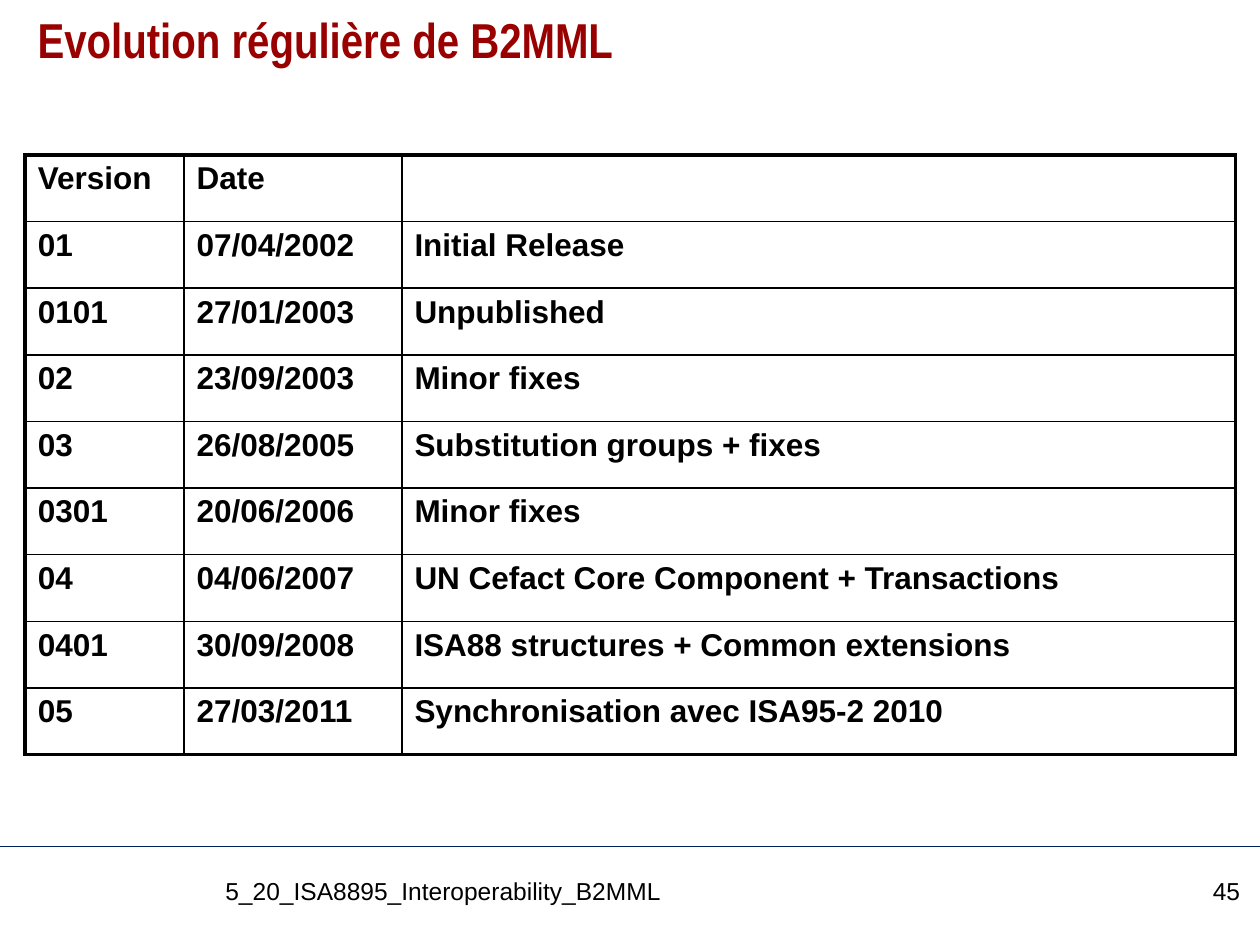
from lxml.etree import SubElement
from pptx import Presentation
from pptx.dml.color import RGBColor
from pptx.enum.shapes import MSO_CONNECTOR
from pptx.enum.text import MSO_ANCHOR, PP_ALIGN
from pptx.oxml.ns import qn
from pptx.util import Pt

COLORS = {"title": "990000", "cell": "010000", "footer": "000000",
          "border": "000000", "rule": "002060"}
TITLE = "Evolution régulière de B2MML"
FOOTER = "5_20_ISA8895_Interoperability_B2MML"
PAGE = "45"
VERSIONS = [
    ("Version", "Date", ""),
    ("01", "07/04/2002", "Initial Release"),
    ("0101", "27/01/2003", "Unpublished"),
    ("02", "23/09/2003", "Minor fixes"),
    ("03", "26/08/2005", "Substitution groups + fixes"),
    ("0301", "20/06/2006", "Minor fixes"),
    ("04", "04/06/2007", "UN Cefact Core Component + Transactions"),
    ("0401", "30/09/2008", "ISA88 structures + Common extensions"),
    ("05", "27/03/2011", "Synchronisation avec ISA95-2 2010"),
]
SLIDE_W, SLIDE_H = 720, 540
LEFT, TABLE_TOP = 14.4, 88.56
COL_WIDTHS = [90.72, 124.56, 476.4]
ROW_H = 38.08
RULE_Y, FOOTER_TOP, FOOTER_H = 483.84, 496.8, 32.4
OUTER, INNER = 2.25, 1


def color(name):
    return RGBColor.from_string(COLORS[name])


def add_run(p, text, size, name, font="Arial", bold=False):
    r = p.add_run()
    r.text = text
    r.font.size, r.font.name, r.font.bold = Pt(size), font, bold
    r.font.color.rgb = color(name)


def add_text(s, box, text, size, name, align=PP_ALIGN.LEFT, spacing=1.0, **style):
    tf = s.shapes.add_textbox(*map(Pt, box)).text_frame
    tf.word_wrap = True
    tf.vertical_anchor = MSO_ANCHOR.TOP
    p = tf.paragraphs[0]
    p.alignment, p.line_spacing = align, spacing
    add_run(p, text, size, name, **style)


def set_borders(cell, widths):
    """Draw the left, right, top and bottom borders, widths in points."""
    tcPr = cell._tc.get_or_add_tcPr()
    for i, (side, width) in enumerate(zip(("lnL", "lnR", "lnT", "lnB"), widths)):
        ln = tcPr.makeelement(qn(f"a:{side}"), {"w": str(Pt(width))})
        fill = SubElement(ln, qn("a:solidFill"))
        SubElement(fill, qn("a:srgbClr"), val=COLORS["border"])
        tcPr.insert(i, ln)


def add_versions_table(s):
    n_rows, n_cols = len(VERSIONS), len(COL_WIDTHS)
    table = s.shapes.add_table(n_rows, n_cols, Pt(LEFT), Pt(TABLE_TOP),
                               Pt(sum(COL_WIDTHS)), Pt(ROW_H * n_rows)).table
    table.first_row = table.horz_banding = False
    for col, width in zip(table.columns, COL_WIDTHS):
        col.width = Pt(width)
    for i, row in enumerate(VERSIONS):
        table.rows[i].height = Pt(ROW_H)
        for j, text in enumerate(row):
            cell = table.cell(i, j)
            cell.fill.background()
            on_edge = (j == 0, j == n_cols - 1, i == 0, i == n_rows - 1)
            set_borders(cell, [OUTER if edge else INNER for edge in on_edge])
            if text:
                add_run(cell.text_frame.paragraphs[0], text, 18, "cell", bold=True)


def add_footer_rule(s):
    line = s.shapes.add_connector(MSO_CONNECTOR.STRAIGHT, Pt(0), Pt(RULE_Y),
                                  Pt(SLIDE_W), Pt(RULE_Y))
    line.line.color.rgb = color("rule")
    line.line.width = Pt(0.75)
    SubElement(line._element.spPr, qn("a:effectLst"))


def main():
    prs = Presentation()
    prs.slide_width, prs.slide_height = Pt(SLIDE_W), Pt(SLIDE_H)
    s = prs.slides.add_slide(prs.slide_layouts[6])
    add_footer_rule(s)
    add_text(s, (LEFT, 5.76, sum(COL_WIDTHS), 59.76), TITLE, 28, "title",
             spacing=0.9, font="Arial Narrow", bold=True)
    add_versions_table(s)
    add_text(s, (121.68, FOOTER_TOP, 519.12, FOOTER_H), FOOTER, 14, "footer")
    add_text(s, (649.44, FOOTER_TOP, 66.24, FOOTER_H), PAGE, 14, "footer",
             align=PP_ALIGN.RIGHT)
    prs.save("out.pptx")


if __name__ == "__main__":
    main()
